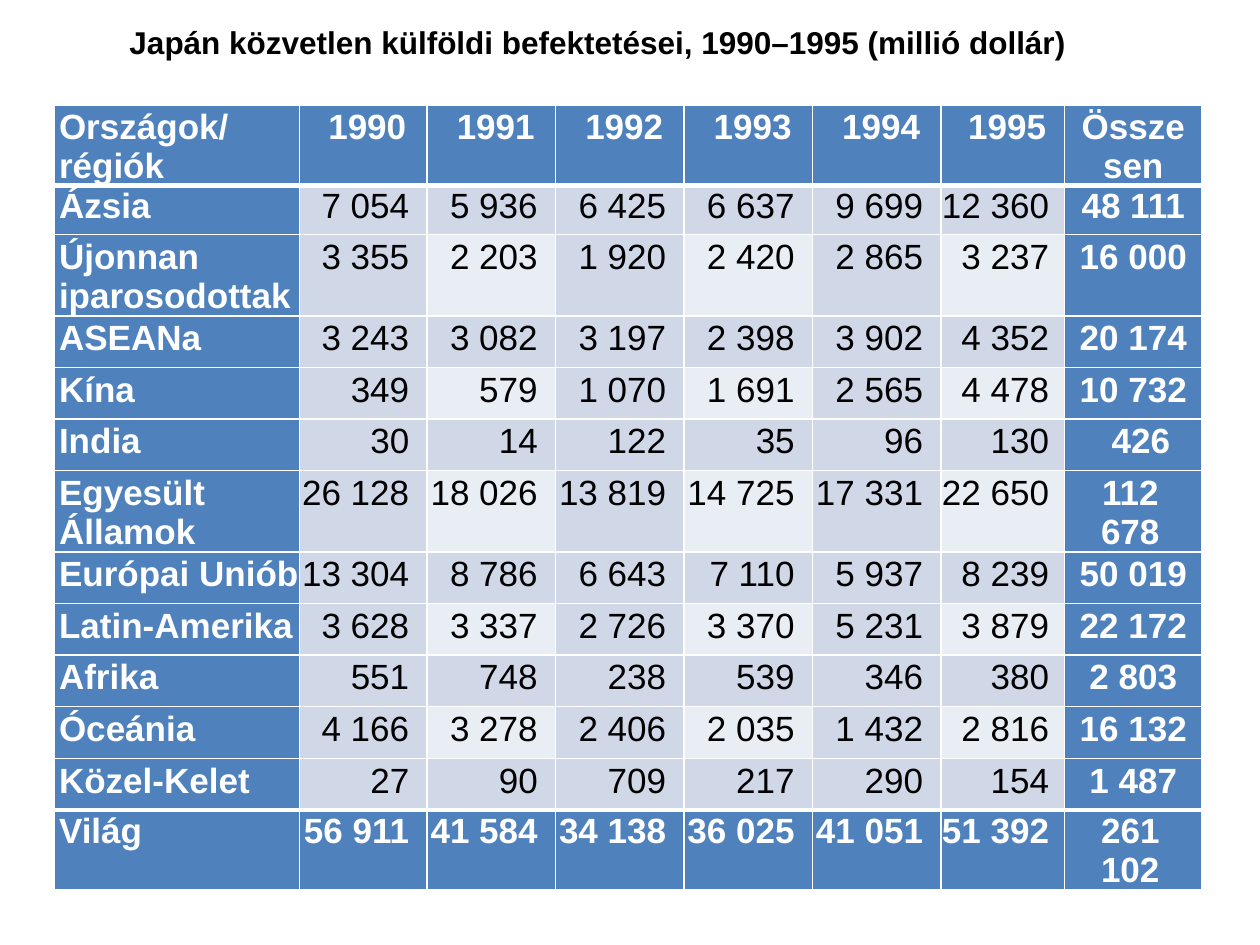
import pptx
import pptx.util
import pptx.dml.color
import pptx.enum.text
import pptx.oxml
import pptx.oxml.ns

Cm, Pt = pptx.util.Cm, pptx.util.Pt
ALIGN = pptx.enum.text.PP_ALIGN
TOP = pptx.enum.text.MSO_ANCHOR.TOP

TITLE = "Japán közvetlen külföldi befektetései, 1990–1995 (millió dollár)"
ROWS = [
    ("Országok/régiók", "1990", "1991", "1992", "1993", "1994", "1995", "Összesen"),
    ("Ázsia", "7 054", "5 936", "6 425", "6 637", "9 699", "12 360", "48 111"),
    ("Újonnan iparosodottak", "3 355", "2 203", "1 920", "2 420", "2 865", "3 237", "16 000"),
    ("ASEANa", "3 243", "3 082", "3 197", "2 398", "3 902", "4 352", "20 174"),
    ("Kína", "349", "579", "1 070", "1 691", "2 565", "4 478", "10 732"),
    ("India", "30", "14", "122", "35", "96", "130", "426"),
    ("Egyesült Államok", "26 128", "18 026", "13 819", "14 725", "17 331", "22 650", "112 678"),
    ("Európai Uniób", "13 304", "8 786", "6 643", "7 110", "5 937", "8 239", "50 019"),
    ("Latin-Amerika", "3 628", "3 337", "2 726", "3 370", "5 231", "3 879", "22 172"),
    ("Afrika", "551", "748", "238", "539", "346", "380", "2 803"),
    ("Óceánia", "4 166", "3 278", "2 406", "2 035", "1 432", "2 816", "16 132"),
    ("Közel-Kelet", "27", "90", "709", "217", "290", "154", "1 487"),
    ("Világ", "56 911", "41 584", "34 138", "36 025", "41 051", "51 392", "261 102"),
]
WIDTHS = [4.95, 2.57, 2.59, 2.59, 2.59, 2.59, 2.49, 2.77]
HEIGHTS = [1.57, 0.99, 1.57] + [1.04] * 9 + [1.02]
LAST, SUM = len(ROWS) - 1, len(WIDTHS) - 1
BLUE, DARK, LIGHT = "4F81BD", "D0D8E8", "E9EDF4"
WHITE, BLACK = "FFFFFF", "000000"


def paint(fill, color):
    fill.solid()
    fill.fore_color.rgb = pptx.dml.color.RGBColor.from_string(color)


def style(par, size, color, bold):
    for run in par.runs:
        font = run.font
        font.name, font.size, font.bold = "Arial", Pt(size), bold
        paint(font.fill, color)


def border(cell, row):
    """Draw white lines, thick under the header and above the last row."""
    thick = {"T": row in (1, LAST), "B": row in (0, LAST - 1)}
    for side in "LRTB":
        width = Pt(3 if thick.get(side) else 1)
        cell._tc.get_or_add_tcPr().append(pptx.oxml.parse_xml(
            f'<a:ln{side} {pptx.oxml.ns.nsdecls("a")} w="{width}"><a:solidFill>'
            f'<a:srgbClr val="{WHITE}"/></a:solidFill></a:ln{side}>'))


def margins(row, col, text):
    """Return the left and right cell margins in centimetres."""
    if col == 0:
        return 0.1, 0
    if col == SUM:
        left = {3: 0.56, 7: 0.13}.get(len(text), 0.25)
        return left, 0.25
    right = 0.31 if col == SUM - 1 else 0.36
    return 0, right + (0.06 if row == 0 else 0)


def put(cell, row, col, text):
    border(cell, row)
    head = row in (0, LAST) or col in (0, SUM)
    light = row % 2 == 0 and col % 2 == 0
    paint(cell.fill, BLUE if head else LIGHT if light else DARK)
    left, right = margins(row, col, text)
    cell.margin_left, cell.margin_right = Cm(left), Cm(right)
    cell.margin_top = Pt(1 if row in (0, 1, LAST) else 1.8)
    cell.margin_bottom = 0
    cell.vertical_anchor = TOP
    par = cell.text_frame.paragraphs[0]
    par.text = text
    par.alignment = {0: ALIGN.LEFT, SUM: ALIGN.CENTER}.get(col, ALIGN.RIGHT)
    style(par, 20, WHITE if head else BLACK, head)


def main():
    deck = pptx.Presentation()
    deck.slide_width, deck.slide_height = Cm(25.4), Cm(19.05)
    slide = deck.slides.add_slide(deck.slide_layouts[5])

    title = slide.shapes.title
    title.left, title.top = Cm(1.09), Cm(0.33)
    title.width, title.height = Cm(22.81), Cm(1.27)
    frame = title.text_frame
    frame.text = TITLE
    frame.vertical_anchor = TOP
    frame.margin_left = Cm(1.52)
    frame.paragraphs[0].alignment = ALIGN.LEFT
    style(frame.paragraphs[0], 18, BLACK, True)

    table = slide.shapes.add_table(
        len(ROWS), len(WIDTHS), Cm(1.09), Cm(2.13),
        Cm(sum(WIDTHS)), Cm(sum(HEIGHTS))).table
    for line, width in zip(table.columns, WIDTHS):
        line.width = Cm(width)
    for line, height in zip(table.rows, HEIGHTS):
        line.height = Cm(height)
    for row, texts in enumerate(ROWS):
        for col, text in enumerate(texts):
            put(table.cell(row, col), row, col, text)

    deck.save("out.pptx")


if __name__ == "__main__":
    main()
